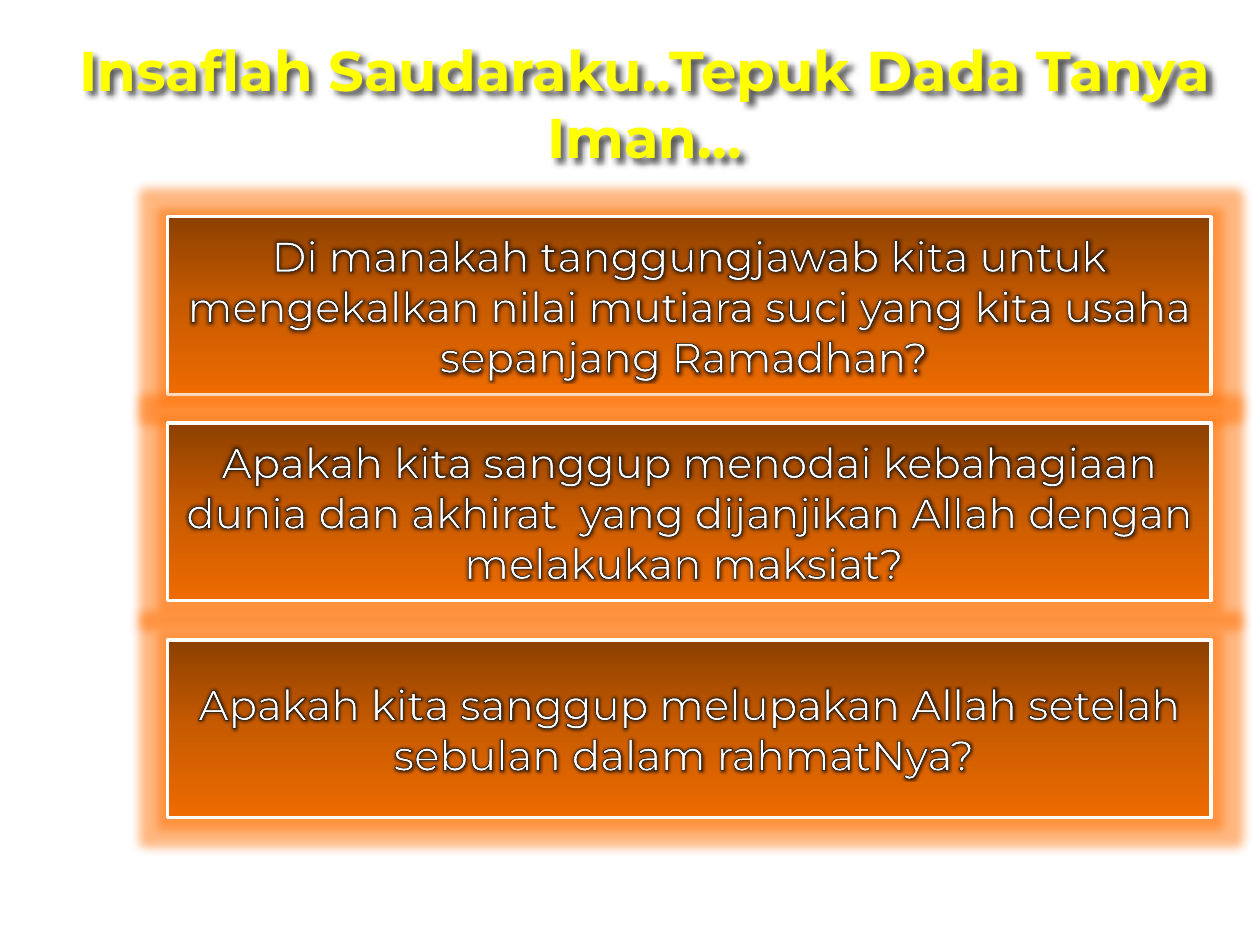
"""Build a slide with a bold title above three glowing question boxes."""
from dataclasses import dataclass

from pptx import Presentation
from pptx.dml.color import RGBColor
from pptx.enum.shapes import MSO_SHAPE
from pptx.enum.text import MSO_ANCHOR, MSO_AUTO_SIZE, PP_ALIGN
from pptx.oxml import parse_xml
from pptx.util import Cm, Pt

RECT = MSO_SHAPE.RECTANGLE
TOP, MIDDLE = MSO_ANCHOR.TOP, MSO_ANCHOR.MIDDLE
CENTER = PP_ALIGN.CENTER
GROW, FIXED = MSO_AUTO_SIZE.SHAPE_TO_FIT_TEXT, MSO_AUTO_SIZE.NONE
NS = 'xmlns:a="http://schemas.openxmlformats.org/drawingml/2006/main"'
COLORS = {
    "title": "FFFF00", "text": "FFFFFF", "edge": "000000", "line": "FFFFFF",
    "dark": "8D4000", "mid": "C85B00", "light": "EE6B00", "glow": "FF6F00",
}
STOPS = {"dark": 0, "mid": 50, "light": 100}
TITLE = {"size": Pt(32), "bold": True, "name": "Montserrat"}
BODY = {"size": Pt(24), "bold": False, "name": "Montserrat"}


@dataclass
class Box:
    top: float
    text: str


BOXES = [
    Box(4.37, "Di manakah tanggungjawab kita untuk mengekalkan nilai "
              "mutiara suci yang kita usaha sepanjang Ramadhan? "),
    Box(8.53, "Apakah kita sanggup menodai kebahagiaan dunia dan akhirat  "
              "yang dijanjikan Allah dengan melakukan maksiat? "),
    Box(12.9, "Apakah kita sanggup melupakan Allah setelah sebulan "
              "dalam rahmatNya? "),
]


def paint(key: str, alpha: int = 100) -> str:
    return (f'<a:srgbClr val="{COLORS[key]}">'
            f'<a:alpha val="{alpha * 1000}"/></a:srgbClr>')


def node(tag: str, attrs: str, inner: str):
    return parse_xml(f'<a:{tag} {NS} {attrs}>{inner}</a:{tag}>')


def glow(key: str, size: float, alpha: int):
    return node("glow", f'rad="{Pt(size)}"', paint(key, alpha))


def write(shape, text: str, style: dict, key: str, anchor, fit):
    frame = shape.text_frame
    frame.word_wrap = True
    frame.auto_size = fit
    frame.vertical_anchor = anchor
    para = frame.paragraphs[0]
    para.alignment = CENTER
    run = para.add_run()
    run.text = text
    for name, value in style.items():
        setattr(run.font, name, value)
    run.font.color.rgb = RGBColor.from_string(COLORS[key])
    props = run._r.get_or_add_rPr()
    props.insert(0, node("ln", f'w="{Pt(0.75)}"',
                         f'<a:solidFill>{paint("edge")}</a:solidFill>'))
    return props


def add_title(slide, text: str) -> None:
    shape = slide.shapes.title
    shape.left, shape.top = Cm(1.19), Cm(0.58)
    shape.width, shape.height = Cm(23.62), Cm(3)
    write(shape, text, TITLE, "title", TOP, GROW)
    shade = node("outerShdw", f'blurRad="{Pt(4)}" dist="{Pt(3)}" '
                 'dir="2700000" algn="tl" rotWithShape="0"',
                 paint("edge", 65))
    shape._element.spPr.append(node("effectLst", "", ""))
    shape._element.spPr[-1].append(shade)


def add_box(slide, box: Box) -> None:
    shape = slide.shapes.add_shape(
        RECT, Cm(3.38), Cm(box.top), Cm(21.03), Cm(3.58))
    stops = "".join(f'<a:gs pos="{pos * 1000}">{paint(key)}</a:gs>'
                    for key, pos in STOPS.items())
    props = shape._element.spPr
    props.insert(2, node("gradFill", 'rotWithShape="1"',
                         f'<a:gsLst>{stops}</a:gsLst>'
                         '<a:lin ang="5400000" scaled="0"/>'))
    shape.line.color.rgb = RGBColor.from_string(COLORS["line"])
    shape.line.width = Pt(2)
    shape.shadow.inherit = False
    props[-1].append(glow("glow", 11, 50))
    run = write(shape, box.text, BODY, "text", MIDDLE, FIXED)
    halo = node("effectLst", "", "")
    halo.append(glow("edge", 4, 65))
    run.insert(2, halo)


def main() -> None:
    deck = Presentation()
    deck.slide_width, deck.slide_height = Cm(25.4), Cm(19.05)
    slide = deck.slides.add_slide(deck.slide_layouts[5])
    add_title(slide, "Insaflah Saudaraku..Tepuk Dada Tanya Iman…")
    for box in BOXES:
        add_box(slide, box)
    deck.save("out.pptx")


if __name__ == "__main__":
    main()
